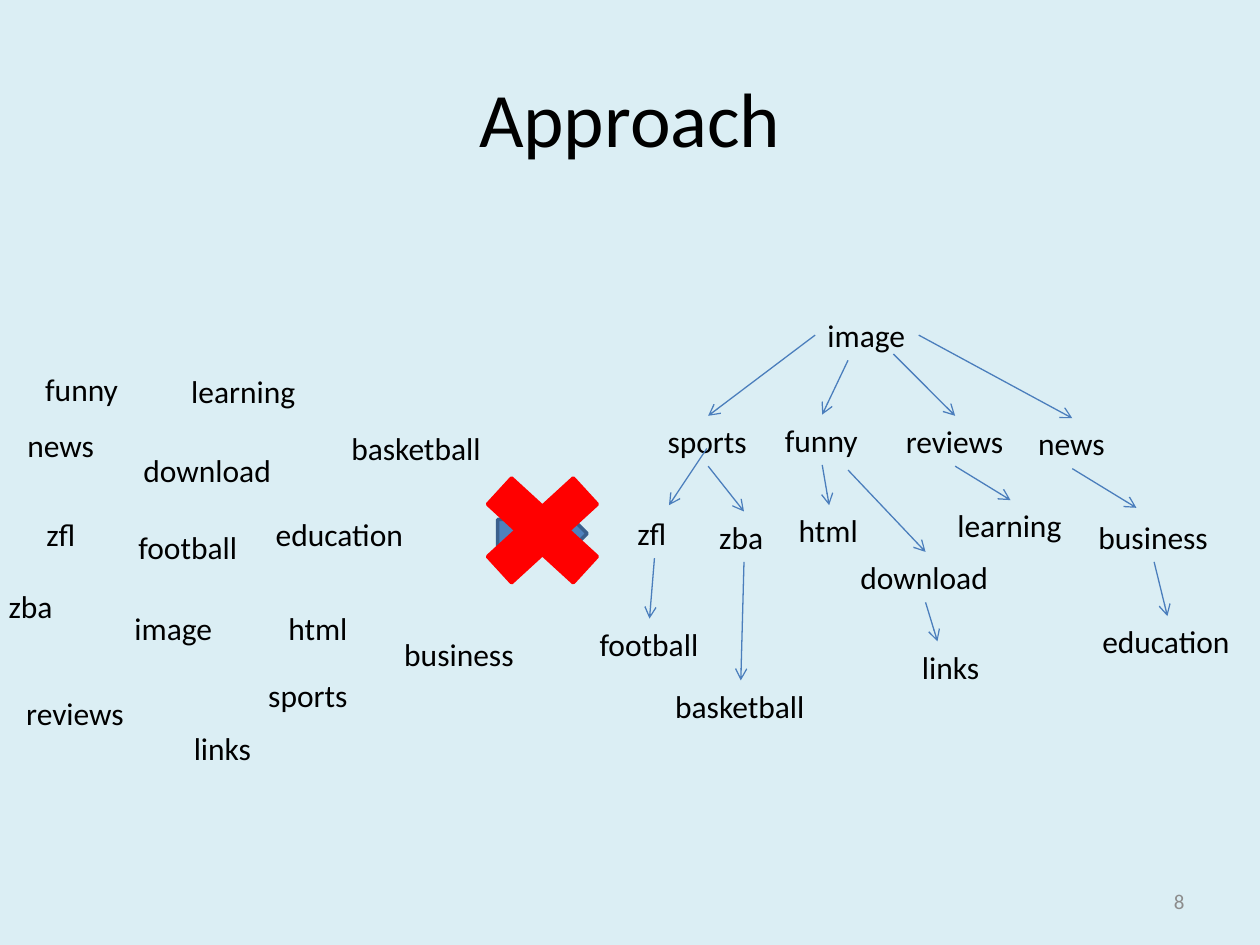
from lxml import etree
from pptx import Presentation
from pptx import util as u
from pptx.dml.color import RGBColor
from pptx.enum import shapes, text
from pptx.oxml.ns import qn

WORD_H = 28.8
WORD_W = {
    "funny": 56.9, "news": 53.3, "download": 88.6, "zfl": 33.8, "zba": 42.5,
    "reviews": 70.6, "links": 47.5, "sports": 60.5, "football": 71.3,
    "education": 88.6, "image": 59.8, "html": 49, "business": 77.8,
    "basketball": 89.3, "learning": 74.9,
}
# Left and top of each word, in points
CLOUD = {
    "funny": (18.7, 208.1), "news": (8.6, 239.8), "download": (74.9, 254.2),
    "zfl": (19.4, 290.9), "zba": (-2.2, 331.9), "reviews": (7.9, 393.1),
    "links": (103.7, 413.3), "sports": (146.2, 383), "football": (72, 298.1),
    "education": (150.5, 290.9), "image": (69.8, 344.2), "html": (157.7, 344.2),
    "business": (223.9, 359.3), "basketball": (193.7, 241.9),
    "learning": (102.2, 208.8),
}
TREE = {
    "image": (465.8, 177.1), "sports": (374.4, 237.6), "funny": (441.4, 236.9),
    "reviews": (510.5, 237.6), "news": (586.1, 239), "zfl": (357.1, 290.2),
    "football": (335.5, 353.5), "zba": (403.9, 292.3),
    "basketball": (378.7, 388.8), "html": (449.3, 288.7),
    "download": (484.6, 315.4), "links": (519.8, 366.5),
    "learning": (540, 285.8), "business": (620.6, 292.3),
    "education": (622.8, 352.1),
}
# Parent, child, and a start or end that is not the middle of the word's edge
BRANCHES = [
    ("image", "sports", (465.8, 191.5), None),
    ("image", "funny", (484.6, 205.9), None),
    ("image", "reviews", (510.5, 202.3), None),
    ("image", "news", (525, 191.5), None),
    ("sports", "zfl", (403.9, 256.3), (382.3, 288.7)),
    ("zfl", "football", None, None),
    ("sports", "zba", None, None),
    ("zba", "basketball", None, None),
    ("funny", "html", None, None),
    ("funny", "download", (484.6, 268.6), None),
    ("download", "links", None, (535.7, 366.5)),
    ("reviews", "learning", None, None),
    ("news", "business", None, (649.4, 290.2)),
    ("business", "education", None, None),
]


def color(hex_string):
    return RGBColor.from_string(hex_string)


def pts(*values):
    return [u.Pt(v) for v in values]


def write(tf, content, size=18, fill="000000", font="Calibri",
          align=text.PP_ALIGN.LEFT, anchor=text.MSO_ANCHOR.TOP, wrap=True):
    tf.word_wrap = wrap
    tf.vertical_anchor = anchor
    p = tf.paragraphs[0]
    p.alignment = align
    r = p.add_run()
    r.text = content
    r.font.size = u.Pt(size)
    r.font.name = font
    r.font.color.rgb = color(fill)


class Deck:
    background = "DBEEF4"
    arrow_color = "4B7EBC"

    def __init__(self):
        self.prs = Presentation()
        self.prs.slide_width, self.prs.slide_height = pts(720, 540)

    def new_slide(self):
        self.s = self.prs.slides.add_slide(self.prs.slide_layouts[5])
        bg = self.s.background.fill
        bg.solid()
        bg.fore_color.rgb = color(self.background)

    def title(self, content, *box):
        sp = self.s.shapes.title
        sp.left, sp.top, sp.width, sp.height = pts(*box)
        write(sp.text_frame, content, size=44, align=text.PP_ALIGN.CENTER,
              anchor=text.MSO_ANCHOR.MIDDLE)

    def label(self, content, *box, **fmt):
        sp = self.s.shapes.add_textbox(*pts(*box))
        write(sp.text_frame, content, **fmt)
        return sp

    def words(self, places):
        for word, (x, y) in places.items():
            sp = self.label(word, x, y, WORD_W[word], WORD_H, wrap=False)
            sp.text_frame.auto_size = text.MSO_AUTO_SIZE.SHAPE_TO_FIT_TEXT

    def shape(self, kind, *box, fill, line):
        sp = self.s.shapes.add_shape(kind, *pts(*box))
        sp.shadow.inherit = False
        sp.fill.solid()
        sp.fill.fore_color.rgb = color(fill)
        sp.line.color.rgb = color(line)
        sp.line.width = u.Pt(2)

    def arrow(self, start, end):
        sp = self.s.shapes.add_connector(shapes.MSO_CONNECTOR.STRAIGHT,
                                         *pts(*start, *end))
        sp.line.color.rgb = color(self.arrow_color)
        sp.line.width = u.Pt(0.75)
        props = sp.element.spPr
        etree.SubElement(props.find(qn("a:ln")), qn("a:tailEnd"), type="arrow")
        etree.SubElement(props, qn("a:effectLst"))

    def branch(self, parent, child, start=None, end=None):
        """Join the bottom of the parent to the top of the child by default."""
        px, py = TREE[parent]
        cx, cy = TREE[child]
        self.arrow(start or (px + WORD_W[parent] / 2, py + WORD_H),
                   end or (cx + WORD_W[child] / 2, cy))


def main():
    deck = Deck()
    deck.new_slide()
    deck.title("Approach", 36, 21.6, 648, 90)
    deck.label("8", 516, 500.5, 168, 28.8, size=12, fill="8C8C8C",
               align=text.PP_ALIGN.RIGHT, anchor=text.MSO_ANCHOR.MIDDLE)
    deck.words(CLOUD)
    deck.shape(shapes.MSO_SHAPE.RIGHT_ARROW, 284.4, 288.7, 51.1, 32.4,
               fill="4F81BD", line="3A5F8C")
    deck.words(TREE)
    for branch in BRANCHES:
        deck.branch(*branch)
    deck.shape(shapes.MSO_SHAPE.MATH_MULTIPLY, 262.8, 259.9, 94.3, 86.4,
               fill="FF0000", line="FF0000")
    deck.prs.save("out.pptx")


if __name__ == "__main__":
    main()
